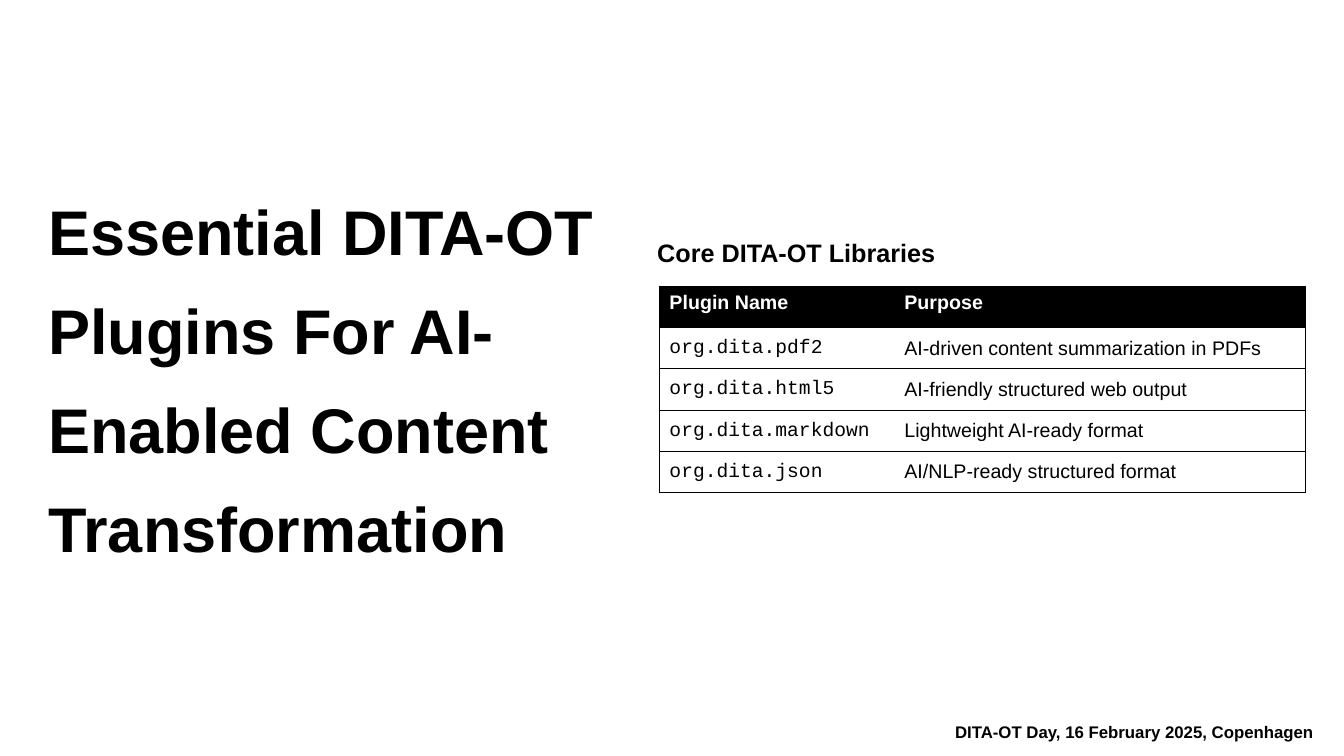
"""Build a slide that lists the core DITA-OT plugins."""
from dataclasses import dataclass

from lxml.etree import SubElement
from pptx import Presentation
from pptx.dml.color import RGBColor as Rgb
from pptx.enum.text import MSO_ANCHOR as Anchor, MSO_AUTO_SIZE as Fit, PP_ALIGN as Align
from pptx.oxml.ns import qn
from pptx.util import Inches, Pt


@dataclass(frozen=True)
class Theme:
    ink: Rgb = Rgb(0, 0, 0)
    paper: Rgb = Rgb(255, 255, 255)
    sans: str = "Arial"
    mono: str = "Courier New"
    title: int = 45
    head: int = 18
    cell: int = 14
    foot: int = 12
    rule: float = 0.75


@dataclass(frozen=True)
class Plugin:
    name: str
    use: str


THEME = Theme()
PLUGINS = [
    Plugin("org.dita.pdf2", "AI-driven content summarization in PDFs"),
    Plugin("org.dita.html5", "AI-friendly structured web output"),
    Plugin("org.dita.markdown", "Lightweight AI-ready format"),
    Plugin("org.dita.json", "AI/NLP-ready structured format"),
]


def write(frame, text: str, *, size: int, bold: bool = False, face: str = THEME.sans,
          color: Rgb = THEME.ink, align=Align.LEFT, space: float = 1.0) -> None:
    para = frame.paragraphs[0]
    para.alignment, para.line_spacing = align, space
    run = para.add_run()
    run.text = text
    font = run.font
    font.size, font.bold, font.name = Pt(size), bold, face
    font.color.rgb = color


def place(shape, left: float, top: float, width: float, height: float, pad: float = 0.05):
    shape.left, shape.top = Inches(left), Inches(top)
    shape.width, shape.height = Inches(width), Inches(height)
    frame = shape.text_frame
    frame.word_wrap, frame.auto_size = True, Fit.NONE
    frame.vertical_anchor = Anchor.TOP
    frame.margin_left = frame.margin_right = Inches(0.1)
    frame.margin_top = frame.margin_bottom = Inches(pad)
    return frame


def edge(cell, sides: str) -> None:
    """Rule the given sides of a cell and clear the others."""
    props = cell._tc.get_or_add_tcPr()
    for spot, side in enumerate("LRTB"):
        line = props.makeelement(qn(f"a:ln{side}"), {"w": str(Pt(THEME.rule))})
        props.insert(spot, line)
        if side in sides:
            fill = SubElement(line, qn("a:solidFill"))
            SubElement(fill, qn("a:srgbClr"), val=str(THEME.ink))
        else:
            SubElement(line, qn("a:noFill"))


def draw_table(slide, left: float, top: float, widths: list[float], high: float) -> None:
    rows = [Plugin("Plugin Name", "Purpose"), *PLUGINS]
    table = slide.shapes.add_table(
        len(rows), len(widths), Inches(left), Inches(top),
        Inches(sum(widths)), Inches(high * len(rows))).table
    for col, width in zip(table.columns, widths):
        col.width = Inches(width)
    for r, row in enumerate(rows):
        table.rows[r].height = Inches(high)
        top_row = r == 0
        for c, text in enumerate((row.name, row.use)):
            cell = table.cell(r, c)
            cell.fill.solid()
            cell.fill.fore_color.rgb = THEME.ink if top_row else THEME.paper
            cell.vertical_anchor = Anchor.TOP if top_row else Anchor.MIDDLE
            edge(cell, "LTB" if c == 0 else "RTB")
            write(cell.text_frame, text, size=THEME.cell, bold=top_row,
                  face=THEME.mono if c == 0 and not top_row else THEME.sans,
                  color=THEME.paper if top_row else THEME.ink)


def main() -> None:
    deck = Presentation()
    deck.slide_width, deck.slide_height = Inches(13.33), Inches(7.5)
    slide = deck.slides.add_slide(deck.slide_layouts[5])
    slide.background.fill.solid()
    slide.background.fill.fore_color.rgb = THEME.paper

    title = place(slide.shapes.title, 0.38, 1.63, 5.75, 3.89)
    write(title, "Essential DITA-OT Plugins For AI-Enabled Content Transformation",
          size=THEME.title, bold=True, space=1.31)
    head = place(slide.shapes.add_textbox(0, 0, 0, 0), 6.42, 2.16, 6.41, 0.56)
    write(head, "Core DITA-OT Libraries", size=THEME.head, bold=True, space=1.5)
    draw_table(slide, 6.54, 2.84, [2.33, 4.08], 0.41)
    foot = place(slide.shapes.add_textbox(0, 0, 0, 0), 1.88, 7.06, 11.25, 0.38, pad=0.1)
    write(foot, "DITA-OT Day, 16 February 2025, Copenhagen", size=THEME.foot,
          bold=True, align=Align.RIGHT)

    deck.save("out.pptx")


if __name__ == "__main__":
    main()
